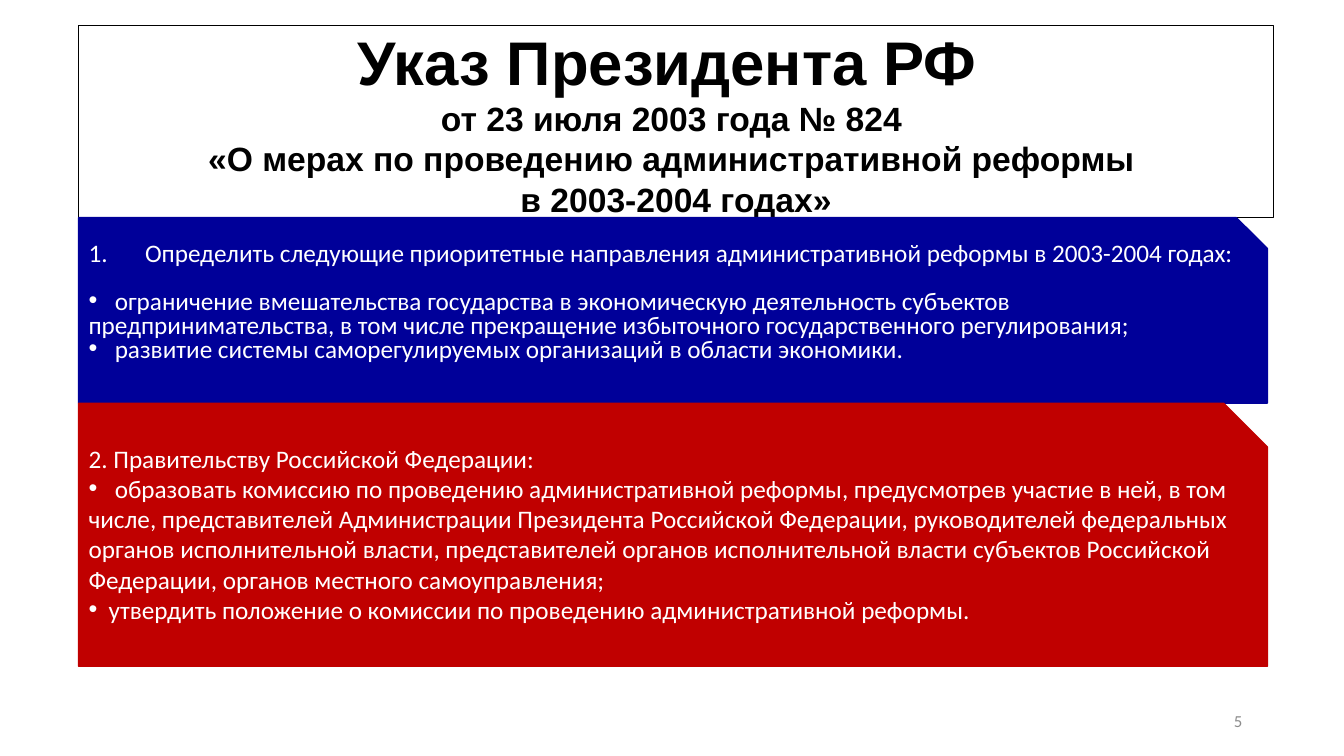
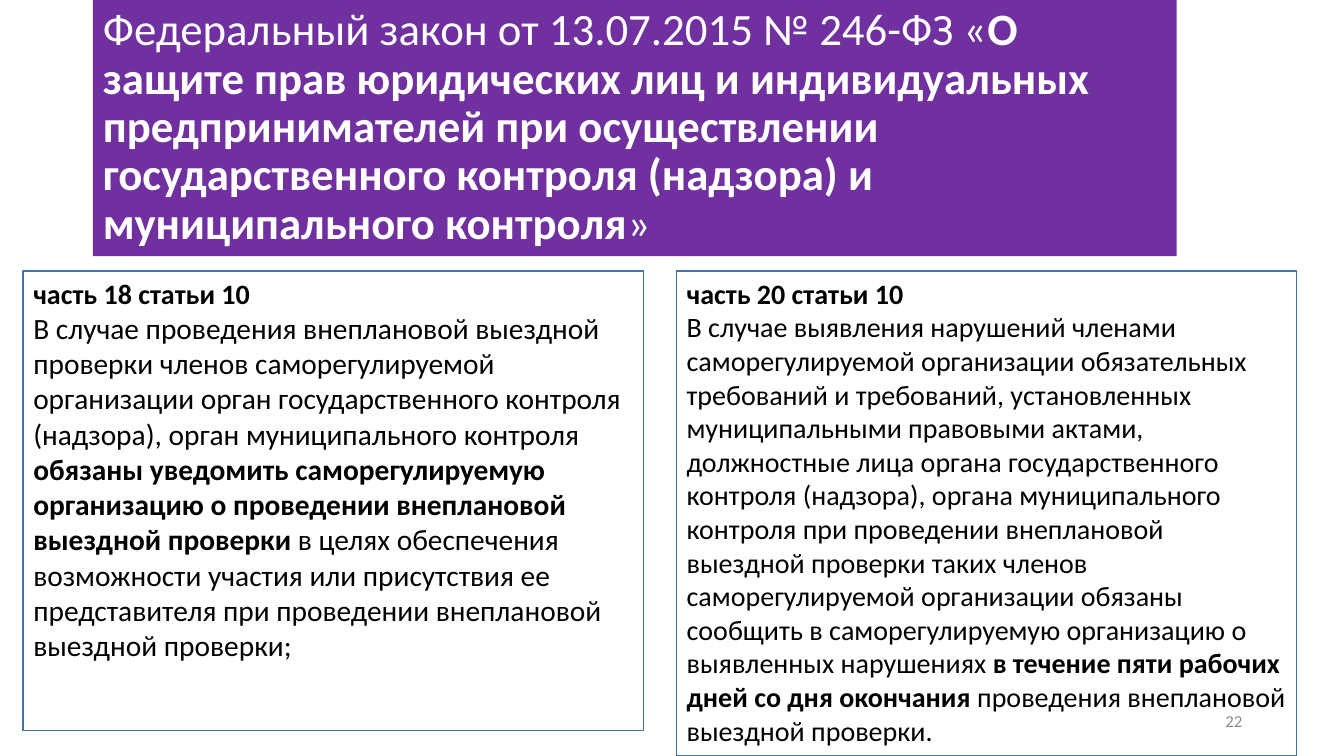
from dataclasses import dataclass

from lxml import etree
from pptx import Presentation
from pptx.dml.color import RGBColor
from pptx.enum.shapes import MSO_SHAPE
from pptx.enum.text import MSO_ANCHOR, MSO_AUTO_SIZE, PP_ALIGN
from pptx.oxml.ns import qn
from pptx.util import Emu, Pt

LEFT, CENTER, RIGHT = PP_ALIGN.LEFT, PP_ALIGN.CENTER, PP_ALIGN.RIGHT
TOP, MIDDLE = MSO_ANCHOR.TOP, MSO_ANCHOR.MIDDLE
SNIP = MSO_SHAPE.SNIP_1_RECTANGLE
TITLE_ONLY, TWO_CONTENT = 5, 3  # layouts of the default template
PX = 9144  # 100 px to the inch
SLIDE_W, SLIDE_H = 1333, 750


@dataclass(frozen=True)
class Theme:
    head_font: str = "Arial"
    body_font: str = "Calibri"
    white: str = "FFFFFF"
    black: str = "000000"
    blue: str = "000099"
    red: str = "C00000"
    purple: str = "7030A0"
    border: str = "43739E"
    grey: str = "8C8C8C"
    decree_size: int = 44
    law_size: int = 32
    subtitle_size: int = 24
    column_size: int = 20
    wide_column_size: int = 21
    block_size: int = 18
    number_size: int = 12


T = Theme()

# Decree slide
DECREE_TITLE = [
    ("Указ Президента РФ ", T.decree_size),
    ("от 23 июля 2003 года № 824 ", T.subtitle_size),
    ("«О мерах по проведению административной реформы ", T.subtitle_size),
    ("в 2003-2004 годах»", T.subtitle_size),
]
# Each item: marker ("1", "•" or none), offset of the text in px, text
BLOCKS = [
    dict(color=T.blue, height=184, bottom=35, spacing=0.8, list_gap=17, items=[
        ("1", 56, "Определить следующие приоритетные направления административной "
                  "реформы в 2003-2004 годах:"),
        ("•", 26, "ограничение вмешательства государства в экономическую деятельность "
                  "субъектов предпринимательства, в том числе прекращение избыточного "
                  "государственного регулирования;"),
        ("•", 26, "развитие системы саморегулируемых организаций в области экономики."),
    ]),
    dict(color=T.red, height=261, bottom=29, spacing=1.0, list_gap=0, items=[
        ("", 0, "2. Правительству Российской Федерации:"),
        ("•", 26, "образовать комиссию по проведению административной реформы, "
                  "предусмотрев участие в ней, в том числе, представителей Администрации "
                  "Президента Российской Федерации, руководителей федеральных органов "
                  "исполнительной власти, представителей органов исполнительной власти "
                  "субъектов Российской Федерации, органов местного самоуправления;"),
        ("•", 20, "утвердить положение о комиссии по проведению административной реформы."),
    ]),
]

# Law slide: runs are (text, bold)
LAW_TITLE = [
    ("Федеральный закон от 13.07.2015 № 246-ФЗ «", False),
    ("О защите прав юридических лиц и индивидуальных предпринимателей при "
     "осуществлении государственного контроля (надзора) и муниципального контроля", True),
    ("»", False),
]
COLUMNS = [
    dict(head="часть 18 статьи 10", size=T.wide_column_size, height=456, runs=[
        ("В случае проведения внеплановой выездной проверки членов саморегулируемой "
         "организации орган государственного контроля (надзора), орган муниципального "
         "контроля ", False),
        ("обязаны уведомить саморегулируемую организацию о проведении внеплановой "
         "выездной проверки ", True),
        ("в целях обеспечения возможности участия или присутствия ее представителя "
         "при проведении внеплановой выездной проверки;", False),
    ]),
    dict(head="часть 20 статьи 10", size=T.column_size, height=481, runs=[
        ("В случае выявления нарушений членами саморегулируемой организации "
         "обязательных требований и требований, установленных муниципальными "
         "правовыми актами, должностные лица органа государственного контроля "
         "(надзора), органа муниципального контроля при проведении внеплановой "
         "выездной проверки таких членов саморегулируемой организации обязаны "
         "сообщить в саморегулируемую организацию о выявленных нарушениях ", False),
        ("в течение пяти рабочих дней со дня окончания ", True),
        ("проведения внеплановой выездной проверки.", False),
    ]),
]


def px(n):
    return Emu(n * PX)


def place(sp, x, y, w, h):
    sp.left, sp.top, sp.width, sp.height = px(x), px(y), px(w), px(h)


def paint(sp, fill, line=None):
    sp.fill.solid()
    sp.fill.fore_color.rgb = RGBColor.from_string(fill)
    if line:
        sp.line.color.rgb = RGBColor.from_string(line)
        sp.line.width = Pt(1)
    else:
        sp.line.fill.background()


def frame(sp, anchor, bottom=5):
    tf = sp.text_frame
    tf.word_wrap = True
    tf.auto_size = MSO_AUTO_SIZE.NONE
    tf.vertical_anchor = anchor
    tf.margin_left = tf.margin_right = px(10)
    tf.margin_top, tf.margin_bottom = px(5), px(bottom)
    return tf


def add_paragraph(tf, runs, size, color, font=T.body_font, align=LEFT,
                  spacing=1.0, before=0):
    """Fill the empty first paragraph or add one; runs are (text, bold)."""
    p = tf.paragraphs[0]
    if p.runs:
        p = tf.add_paragraph()
    p.alignment, p.line_spacing = align, spacing
    p.space_before, p.space_after = Pt(before), Pt(0)
    for text, bold in runs:
        r = p.add_run()
        r.text = text
        r.font.name, r.font.size, r.font.bold = font, Pt(size), bold
        r.font.color.rgb = RGBColor.from_string(color)
    return p


def set_marker(p, marker="", offset=0):
    """Number with a hanging indent, bullet with a tab stop, or no marker."""
    pPr = p._p.get_or_add_pPr()
    hang = px(offset) if marker == "1" else 0
    pPr.set("marL", str(hang))
    pPr.set("indent", str(-hang))
    if marker == "1":
        etree.SubElement(pPr, qn("a:buFont"), typeface="+mj-lt")
        etree.SubElement(pPr, qn("a:buAutoNum"), type="arabicPeriod")
    elif marker:
        etree.SubElement(pPr, qn("a:buFont"), typeface="Arial")
        etree.SubElement(pPr, qn("a:buChar"), char=marker)
        tabs = etree.SubElement(pPr, qn("a:tabLst"))
        etree.SubElement(tabs, qn("a:tab"), pos=str(px(offset)), algn="l")
    else:
        etree.SubElement(pPr, qn("a:buNone"))


def add_slide(prs, layout, title_box, fill, line=None):
    s = prs.slides.add_slide(prs.slide_layouts[layout])
    title = s.shapes.title
    place(title, *title_box)
    paint(title, fill, line)
    return s, frame(title, MIDDLE)


def add_number(s, number):
    sp = s.shapes.add_textbox(px(942), px(695), px(300), px(40))
    add_paragraph(frame(sp, MIDDLE), [(number, False)], T.number_size, T.grey, align=RIGHT)


def decree_slide(prs):
    left, title_top, title_h = 78, 25, 191
    s, tf = add_slide(prs, TITLE_ONLY, (left, title_top, 1185, title_h), T.white, T.black)
    for text, size in DECREE_TITLE:
        add_paragraph(tf, [(text, True)], size, T.black, T.head_font, CENTER)
    y = title_top + title_h
    for block in BLOCKS:
        sp = s.shapes.add_shape(SNIP, px(left), px(y), px(1179), px(block["height"]))
        sp.shadow.inherit = False
        paint(sp, block["color"], block["color"])
        tf = frame(sp, MIDDLE, block["bottom"])
        for i, (marker, offset, text) in enumerate(block["items"]):
            lead = "\t" if marker == "•" else ""
            p = add_paragraph(tf, [(lead + text, False)], T.block_size, T.white,
                              spacing=block["spacing"],
                              before=block["list_gap"] if i == 1 else 0)
            set_marker(p, marker, offset)
        y += block["height"]
    add_number(s, "5")


def law_slide(prs):
    s, tf = add_slide(prs, TWO_CONTENT, (92, 0, 1075, 254), T.purple)
    add_paragraph(tf, LAW_TITLE, T.law_size, T.white, spacing=0.9)
    left, top, width, gap = 23, 269, 615, 33
    for i, column in enumerate(COLUMNS):
        sp = s.placeholders[i + 1]
        place(sp, left + i * (width + gap), top, width, column["height"])
        paint(sp, T.white, T.border)
        tf = frame(sp, TOP)
        for runs, size in (([(column["head"], True)], T.column_size),
                           (column["runs"], column["size"])):
            set_marker(add_paragraph(tf, runs, size, T.black))
    add_number(s, "22")


def main():
    prs = Presentation()
    prs.slide_width, prs.slide_height = px(SLIDE_W), px(SLIDE_H)
    decree_slide(prs)
    law_slide(prs)
    prs.save("out.pptx")


if __name__ == "__main__":
    main()
